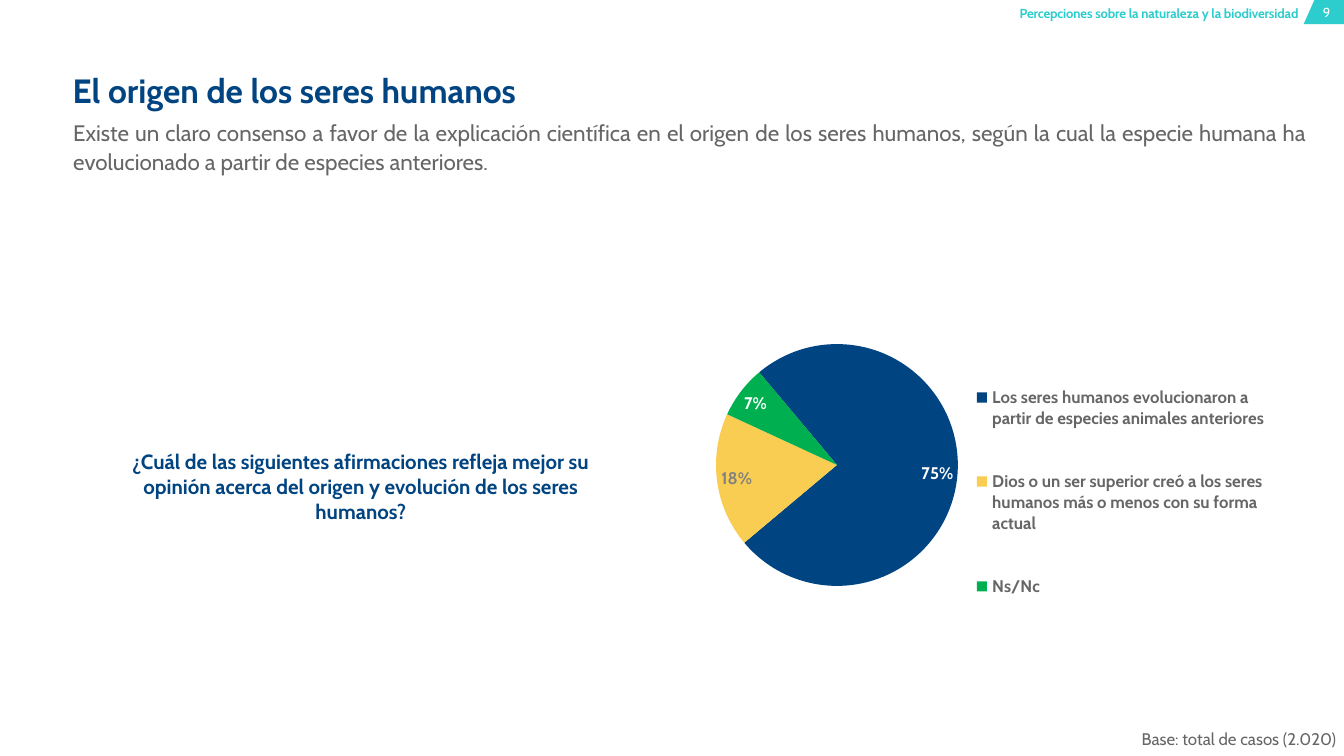
"""Build the slide about the origin of human beings, with its survey pie chart."""
from dataclasses import dataclass

import pptx
import pptx.chart.data
import pptx.dml.color
import pptx.enum.chart
import pptx.enum.text
import pptx.oxml
import pptx.oxml.ns
import pptx.util

RGBColor = pptx.dml.color.RGBColor
Align = pptx.enum.text.PP_ALIGN
LabelPosition = pptx.enum.chart.XL_LABEL_POSITION

NAVY = RGBColor(0x00, 0x44, 0x81)
TURQUOISE = RGBColor(0x2D, 0xCC, 0xCD)
GREY = RGBColor(0x66, 0x66, 0x66)
MID_GREY = RGBColor(0x80, 0x80, 0x80)
WHITE = RGBColor(0xFF, 0xFF, 0xFF)
YELLOW = RGBColor(0xF8, 0xCD, 0x51)
GREEN = RGBColor(0x00, 0xB0, 0x50)
FONT = "Cabin"
SLIDE_WIDTH = pptx.util.Inches(10)
SLIDE_HEIGHT = SLIDE_WIDTH * 9 // 16


@dataclass(frozen=True)
class Area:
    """Position and size as percentages of the surrounding space."""
    left: float
    top: float
    width: float
    height: float

    def lengths(self) -> tuple[int, int, int, int]:
        """Return left, top, width and height on the slide in EMU."""
        return (across(self.left), down(self.top),
                across(self.width), down(self.height))


@dataclass(frozen=True)
class Answer:
    """One survey answer with its share and colours."""
    wording: str
    share: float
    fill: RGBColor
    label: RGBColor


ANSWERS = [
    Answer("Los seres humanos evolucionaron a partir de especies animales anteriores",
           0.75, NAVY, WHITE),
    Answer("Dios o un ser superior creó a los seres humanos más o menos con su forma actual",
           0.18, YELLOW, MID_GREY),
    Answer("Ns/Nc", 0.07, GREEN, WHITE),
]
PIE_AREA = Area(21.5, 3.8, 44.9, 49.4)
LEGEND_AREA = Area(60.2, 4, 36, 60)


def across(percent: float) -> int:
    """Convert a percentage of the slide width to EMU."""
    return round(SLIDE_WIDTH * percent / 100)


def down(percent: float) -> int:
    """Convert a percentage of the slide height to EMU."""
    return round(SLIDE_HEIGHT * percent / 100)


def format_font(font, size: float, color: RGBColor, bold: bool = False) -> None:
    """Apply the typeface, size, colour and weight."""
    font.name = FONT
    font.size = pptx.util.Pt(size)
    font.color.rgb = color
    font.bold = bold


def add_text(slide, area: Area, text: str, *, size: float, color: RGBColor,
             bold: bool = False, align=Align.LEFT, inset: tuple[float, float] = (0, 0),
             line_points: float | None = None, tracking: int | None = None) -> None:
    """Add a one-paragraph text box, inset at the right and the top in inches."""
    frame = slide.shapes.add_textbox(*area.lengths()).text_frame
    frame.word_wrap = True
    frame.margin_left = frame.margin_bottom = 0
    frame.margin_right = pptx.util.Inches(inset[0])
    frame.margin_top = pptx.util.Inches(inset[1])
    paragraph = frame.paragraphs[0]
    paragraph.alignment = align
    if line_points is not None:
        paragraph.line_spacing = pptx.util.Pt(line_points)
    run = paragraph.add_run()
    run.text = text
    format_font(run.font, size, color, bold)
    if tracking is not None:
        run.font._element.set("spc", str(tracking))


def add_page_corner(slide) -> None:
    """Draw the slanted corner behind the page number."""
    builder = slide.shapes.build_freeform(across(97.8), 0)
    builder.add_line_segments(
        [(across(100), 0), (across(100), down(3.2)), (across(97), down(3.2))])
    corner = builder.convert_to_shape()
    corner.fill.solid()
    corner.fill.fore_color.rgb = TURQUOISE
    corner.line.fill.background()
    corner.shadow.inherit = False


def chart_layout(area: Area, inner: bool = False):
    """Return a manual layout for an area of the chart."""
    target = '<c:layoutTarget val="inner"/>' if inner else ""
    values = (area.left, area.top, area.width, area.height)
    sizes = "".join(f'<c:{tag} val="{value / 100:.4f}"/>'
                    for tag, value in zip("xywh", values))
    return pptx.oxml.parse_xml(
        f'<c:layout {pptx.oxml.ns.nsdecls("c")}><c:manualLayout>{target}'
        f'<c:xMode val="edge"/><c:yMode val="edge"/>{sizes}'
        '</c:manualLayout></c:layout>')


def remove_children(parent, tag: str) -> None:
    """Remove the direct children that have the given tag."""
    for child in parent.findall(pptx.oxml.ns.qn(tag)):
        parent.remove(child)


def place_chart_parts(chart, start_angle: int) -> None:
    """Fix the pie and legend areas and the angle of the first slice."""
    qn = pptx.oxml.ns.qn
    plot_area = chart.element.find(".//" + qn("c:plotArea"))
    remove_children(plot_area, "c:layout")
    plot_area.insert(0, chart_layout(PIE_AREA, inner=True))
    legend = chart.element.find(".//" + qn("c:legend"))
    remove_children(legend, "c:layout")
    legend.find(qn("c:legendPos")).addnext(chart_layout(LEGEND_AREA))
    pie = plot_area.find(qn("c:pieChart"))
    remove_children(pie, "c:firstSliceAng")
    pie.append(pptx.oxml.parse_xml(
        f'<c:firstSliceAng {pptx.oxml.ns.nsdecls("c")} val="{start_angle}"/>'))


def add_answers_pie(slide, area: Area, answers: list[Answer]) -> None:
    """Add the pie chart of the survey answers."""
    survey = pptx.chart.data.CategoryChartData(number_format="0%")
    survey.categories = [answer.wording for answer in answers]
    survey.add_series("Series 1", [answer.share for answer in answers])
    chart = slide.shapes.add_chart(
        pptx.enum.chart.XL_CHART_TYPE.PIE, *area.lengths(), survey).chart
    chart.has_title = False
    format_font(chart.font, 11, WHITE, bold=True)
    chart.font.name = "Calibri"
    chart.has_legend = True
    chart.legend.position = pptx.enum.chart.XL_LEGEND_POSITION.RIGHT
    chart.legend.include_in_layout = False
    format_font(chart.legend.font, 9, GREY, bold=True)

    plot = chart.plots[0]
    plot.vary_by_categories = True
    shares = plot.series[0]
    labels = shares.data_labels
    labels.show_value = True
    labels.number_format = "0%"
    labels.number_format_is_linked = False
    labels.position = LabelPosition.BEST_FIT
    format_font(labels.font, 9, WHITE, bold=True)
    for index, answer in enumerate(answers):
        point = shares.points[index]
        point.format.fill.solid()
        point.format.fill.fore_color.rgb = answer.fill
        point.format.line.fill.background()
        format_font(point.data_label.font, 9, answer.label, bold=True)
        point.data_label.position = LabelPosition.BEST_FIT
    place_chart_parts(chart, start_angle=320)


def main() -> None:
    """Create the presentation and save it."""
    deck = pptx.Presentation()
    deck.slide_width, deck.slide_height = SLIDE_WIDTH, SLIDE_HEIGHT
    slide = deck.slides.add_slide(deck.slide_layouts[6])
    add_page_corner(slide)
    add_text(slide, Area(68.4, 0.71, 28.2, 2.14),
             "Percepciones sobre la naturaleza y la biodiversidad",
             size=7, color=TURQUOISE, bold=True, align=Align.RIGHT, tracking=-5)
    add_text(slide, Area(5.4, 9.25, 88.1, 6.58), "El origen de los seres humanos",
             size=18, color=NAVY, bold=True)
    add_text(slide, Area(5.45, 15.3, 91.85, 7.83),
             "Existe un claro consenso a favor de la explicación científica en el origen de "
             "los seres humanos, según la cual la especie humana ha evolucionado a partir "
             "de especies anteriores.",
             size=12, color=GREY, align=Align.JUSTIFY, line_points=16)
    add_text(slide, Area(98, 0.53, 1.4, 2.49), "9",
             size=7, color=WHITE, align=Align.CENTER)
    add_text(slide, Area(83.9, 95.55, 16.4, 4.45), "Base: total de casos (2.020)",
             size=9, color=GREY, align=Align.RIGHT, inset=(0.09, 0.05))
    add_text(slide, Area(7.4, 59.43, 38.9, 9.79),
             "¿Cuál de las siguientes afirmaciones refleja mejor su opinión acerca del "
             "origen y evolución de los seres humanos?",
             size=11, color=NAVY, bold=True, align=Align.CENTER)
    add_answers_pie(slide, Area(35.2, 43.06, 61.6, 64.77), ANSWERS)
    deck.save("out.pptx")


if __name__ == "__main__":
    main()
